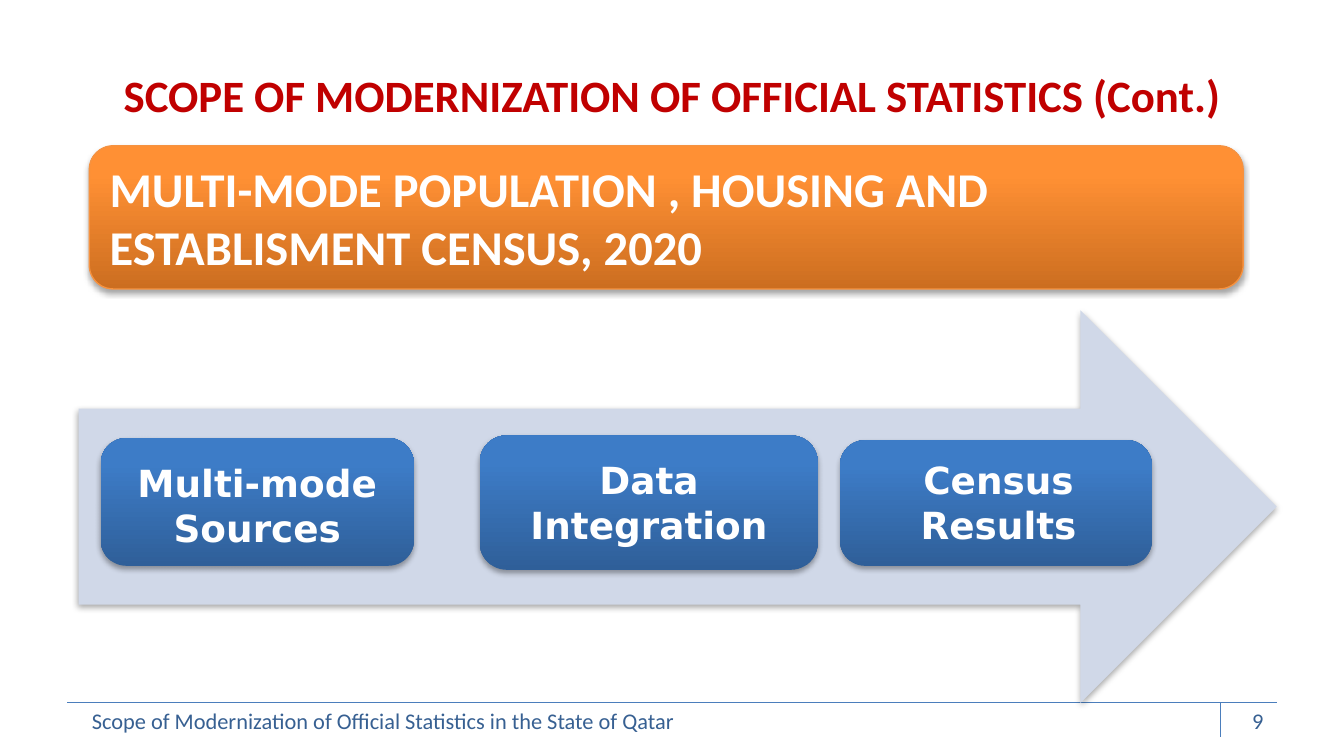
from lxml.etree import SubElement
from pptx import Presentation
from pptx.dml.color import RGBColor
from pptx.enum.shapes import MSO_CONNECTOR as Connector, MSO_SHAPE as Shape
from pptx.enum.text import MSO_ANCHOR as Anchor, MSO_AUTO_SIZE as AutoSize, PP_ALIGN as Align
from pptx.oxml.ns import qn
from pptx.util import Pt

PX = 4572  # EMU in one px, at 200 px to the inch

RED = RGBColor(0xC0, 0x00, 0x00)
WHITE = RGBColor(0xFF, 0xFF, 0xFF)
NAVY = RGBColor(0x37, 0x60, 0x92)
RULE_BLUE = RGBColor(0x4B, 0x7E, 0xBC)
PALE_BLUE = RGBColor(0xD0, 0xD8, 0xE8)
ORANGE_EDGE = RGBColor(0xF6, 0x92, 0x40)
ORANGES = (RGBColor(0xCC, 0x6E, 0x20), RGBColor(0xFF, 0x90, 0x34))
BLUES = (RGBColor(0x2F, 0x5F, 0x99), RGBColor(0x3D, 0x7C, 0xC7))

TITLE = {"name": "Calibri", "size": Pt(24), "bold": True}
BANNER = {"name": "Calibri", "size": Pt(26), "bold": True}
STEP = {"name": "DejaVu Sans", "size": Pt(20), "bold": True}
FOOTER = {"name": "Calibri", "size": Pt(12), "bold": False}


def write(shape, lines, style, color, align, anchor=Anchor.TOP):
    frame = shape.text_frame
    frame.word_wrap = True
    frame.auto_size = AutoSize.NONE
    frame.vertical_anchor = anchor
    frame.text = "\n".join(lines)
    for para in frame.paragraphs:
        para.alignment = align
        for span in para.runs:
            for key, value in style.items():
                setattr(span.font, key, value)
            span.font.color.rgb = color


def add_block(kind, bounds, colors):
    """Add a shape with a soft shadow below; two colours make a gradient, bottom to top."""
    shape = page.shapes.add_shape(kind, *[n * PX for n in bounds])
    shape.line.fill.background()
    if len(colors) == 1:
        shape.fill.solid()
        shape.fill.fore_color.rgb = colors[0]
    else:
        shape.fill.gradient()
        shape.fill.gradient_angle = 90
        for stop, color, position in zip(shape.fill.gradient_stops, colors, (0, 0.8)):
            stop.color.rgb = color
            stop.position = position
    shape.shadow.inherit = False
    effects = shape._element.spPr.find(qn("a:effectLst"))
    shadow = SubElement(effects, qn("a:outerShdw"), blurRad=str(Pt(3.1)),
                        dist=str(Pt(1.8)), dir="5400000", rotWithShape="0")
    black = SubElement(shadow, qn("a:srgbClr"), val="000000")
    SubElement(black, qn("a:alpha"), val="35000")
    return shape


deck = Presentation()
deck.slide_width, deck.slide_height = 2000 * PX, 1125 * PX
page = deck.slides.add_slide(deck.slide_layouts[5])

# Footer
for x1, y1, x2, y2 in ((100, 1045, 1900, 1045), (1816, 1045, 1816, 1097)):
    rule = page.shapes.add_connector(Connector.STRAIGHT, x1 * PX, y1 * PX, x2 * PX, y2 * PX)
    rule.line.color.rgb = RULE_BLUE
    rule.line.width = Pt(0.75)
    SubElement(rule._element.spPr, qn("a:effectLst"))

for bounds, words, align in (
    ((117, 1042, 1100, 100), "Scope of Modernization of Official Statistics in the State of Qatar", Align.LEFT),
    ((1434, 1042, 466, 60), "9", Align.RIGHT),
):
    box = page.shapes.add_textbox(*[n * PX for n in bounds])
    write(box, [words], FOOTER, NAVY, align)

# Title and banner
title = page.shapes.title
title.left, title.top, title.width, title.height = [n * PX for n in (100, 46, 1800, 188)]
write(title, ["SCOPE OF MODERNIZATION OF OFFICIAL STATISTICS (Cont.)"],
      TITLE, RED, Align.CENTER, Anchor.MIDDLE)

banner = add_block(Shape.ROUNDED_RECTANGLE, (133, 217, 1717, 213), ORANGES)
banner.line.color.rgb = ORANGE_EDGE
banner.line.width = Pt(0.75)
write(banner, ["MULTI-MODE POPULATION , HOUSING AND ESTABLISMENT CENSUS, 2020"],
      BANNER, WHITE, Align.LEFT, Anchor.MIDDLE)

# Process arrow with its three steps
add_block(Shape.RIGHT_ARROW, (117, 462, 1783, 584), (PALE_BLUE,))

steps = (
    ((150, 652, 466, 190), (166, 675, 434, 154), ["Multi-mode Sources"]),
    ((714, 648, 503, 200), (760, 671, 412, 154), ["Data Integration"]),
    ((1250, 655, 464, 187), (1307, 671, 358, 154), ["Census", "Results"]),
)
for bounds, _, _ in steps:
    step = add_block(Shape.ROUNDED_RECTANGLE, bounds, BLUES)
    step.adjustments[0] = 0.2
for _, bounds, lines in steps:
    label = page.shapes.add_textbox(*[n * PX for n in bounds])
    write(label, lines, STEP, WHITE, Align.CENTER)

deck.save("out.pptx")
